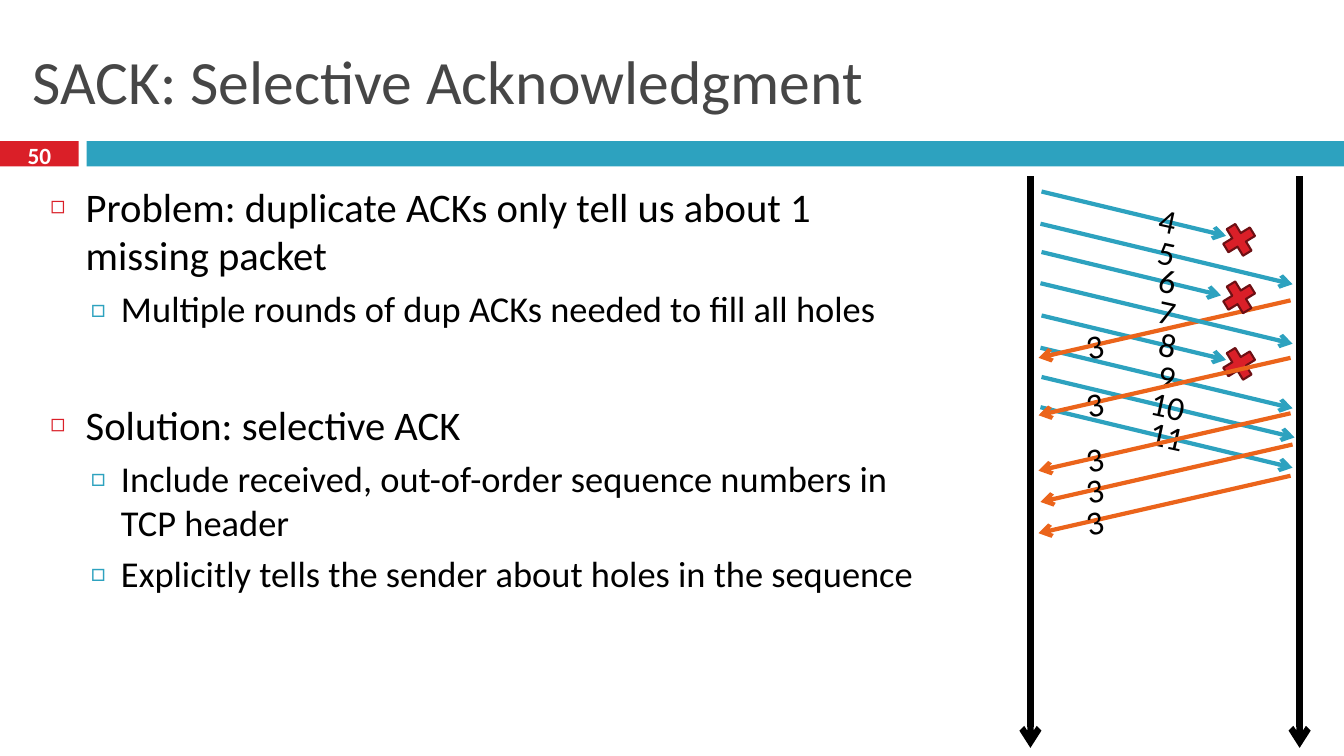
import lxml.etree
import pptx
import pptx.dml.color
import pptx.enum.shapes
import pptx.enum.text
import pptx.oxml.ns
import pptx.util

RGBColor = pptx.dml.color.RGBColor
ALIGN = pptx.enum.text.PP_ALIGN
ANCHOR = pptx.enum.text.MSO_ANCHOR
SHAPE = pptx.enum.shapes.MSO_SHAPE

BLACK = RGBColor(0x00, 0x00, 0x00)
WHITE = RGBColor(0xFF, 0xFF, 0xFF)
GRAY = RGBColor(0x46, 0x46, 0x46)
RED = RGBColor(0xDA, 0x1F, 0x28)
DARK_RED = RGBColor(0x6D, 0x10, 0x14)
TEAL = RGBColor(0x2D, 0xA2, 0xBF)
ORANGE = RGBColor(0xEB, 0x64, 0x1B)

FONT = "Calibri"
PX = 9144  # 100 px to the inch


def px(*lengths):
    return [pptx.util.Emu(length * PX) for length in lengths]


def add_xml(parent, tag, **attributes):
    return lxml.etree.SubElement(parent, pptx.oxml.ns.qn(tag), attributes)


class SlideBuilder:
    # Per list level: indent, hang, size, space before, bullet, its colour and size
    LEVELS = [
        (35, 35, 29, 7, "◻", RED, 60),
        (70, 30, 26, 5.5, "□", TEAL, 70),
    ]

    def __init__(self, presentation):
        self.slide = presentation.slides.add_slide(presentation.slide_layouts[1])
        self.shapes = self.slide.shapes

    def run(self, paragraph, text, size, color=BLACK, bold=False):
        run = paragraph.add_run()
        run.text = text
        run.font.name = FONT
        run.font.size = pptx.util.Pt(size)
        run.font.bold = bold
        run.font.color.rgb = color

    def place(self, shape, left, top, width, height):
        shape.left, shape.top, shape.width, shape.height = px(left, top, width, height)

    def title(self, text, *box):
        title = self.shapes.title
        self.place(title, *box)
        title.text_frame.auto_size = pptx.enum.text.MSO_AUTO_SIZE.NONE
        title.text_frame.vertical_anchor = ANCHOR.MIDDLE
        paragraph = title.text_frame.paragraphs[0]
        paragraph.alignment = ALIGN.LEFT
        self.run(paragraph, text, 44, GRAY)

    def bullets(self, items, *box):
        body = self.slide.placeholders[1]
        self.place(body, *box)
        frame = body.text_frame
        frame.auto_size = pptx.enum.text.MSO_AUTO_SIZE.NONE
        frame.vertical_anchor = ANCHOR.TOP
        for index, (level, text, extra_gap) in enumerate(items):
            indent, hang, size, gap, bullet, color, percent = self.LEVELS[level]
            paragraph = frame.add_paragraph() if index else frame.paragraphs[0]
            paragraph.level = level
            paragraph.space_before = pptx.util.Pt(gap + extra_gap if index else 0)
            properties = paragraph._p.get_or_add_pPr()
            properties.set("marL", str(indent * PX))
            properties.set("indent", str(-hang * PX))
            add_xml(add_xml(properties, "a:buClr"), "a:srgbClr", val=str(color))
            add_xml(properties, "a:buSzPct", val=str(percent * 1000))
            add_xml(properties, "a:buFont", typeface=FONT)
            add_xml(properties, "a:buChar", char=bullet)
            self.run(paragraph, text, size)

    def shape(self, kind, box, fill, outline=None, rotation=0):
        shape = self.shapes.add_shape(kind, *px(*box))
        shape.shadow.inherit = False
        shape.rotation = rotation
        shape.fill.solid()
        shape.fill.fore_color.rgb = fill
        if outline is None:
            shape.line.fill.background()
        else:
            shape.line.color.rgb = outline
            shape.line.width = pptx.util.Pt(1.5)

    def label(self, text, box, size=24, color=BLACK, bold=False, rotation=0):
        label = self.shapes.add_textbox(*px(*box))
        label.rotation = rotation
        frame = label.text_frame
        frame.word_wrap = True
        frame.vertical_anchor = ANCHOR.MIDDLE
        paragraph = frame.paragraphs[0]
        paragraph.alignment = ALIGN.CENTER
        self.run(paragraph, text, size, color, bold)

    def arrow(self, start, end, color, width=3):
        arrow = self.shapes.add_connector(
            pptx.enum.shapes.MSO_CONNECTOR.STRAIGHT, *px(*start, *end))
        arrow.line.color.rgb = color
        arrow.line.width = pptx.util.Pt(width)
        properties = arrow.element.spPr
        add_xml(properties.find(pptx.oxml.ns.qn("a:ln")), "a:tailEnd", type="arrow")
        add_xml(properties, "a:effectLst")

    def packet(self, number, left, top, right):
        drop = round((right - left) * 0.24)
        self.arrow((left, top), (right, top + drop), TEAL)
        self.label(number, (left + 70, top + 3, 111, 50), rotation=12.3)

    def loss(self, top):
        self.shape(SHAPE.MATH_MULTIPLY, (1208, top, 42, 42), RED, DARK_RED, 13.5)

    def acknowledgment(self, right, top):
        self.arrow((right, top), (right - 250, top + 57), ORANGE)
        self.label("3", (1030, top + 20, 111, 50), rotation=347.5)


def main():
    presentation = pptx.Presentation()
    presentation.slide_width, presentation.slide_height = px(1333, 750)
    builder = SlideBuilder(presentation)

    # Header band, title and page number
    builder.shape(SHAPE.RECTANGLE, (0, 140, 78, 25), RED)
    builder.shape(SHAPE.RECTANGLE, (86, 140, 1247, 25), TEAL)
    builder.title("SACK: Selective Acknowledgment", 22, 25, 1289, 108)
    builder.label("50", (0, 137, 78, 33), 16.6, WHITE, bold=True)

    # Problem and solution, the latter set apart by one line
    builder.bullets([
        (0, "Problem: duplicate ACKs only tell us about 1 missing packet", 0),
        (1, "Multiple rounds of dup ACKs needed to fill all holes", 0),
        (0, "Solution: selective ACK", 42.5),
        (1, "Include received, out-of-order sequence numbers in TCP header", 0),
        (1, "Explicitly tells the sender about holes in the sequence", 0),
    ], 40, 175, 879, 558)

    # Sender and receiver time lines
    for x in (1022, 1289):
        builder.arrow((x, 175), (x, 742), BLACK, 4.5)

    # Exchange, from back to front: packets, losses, acknowledgments
    exchange = [
        ([("8", 1033, 313, 1216), ("9", 1032, 345, 1282),
          ("10", 1033, 374, 1284), ("11", 1032, 404, 1282)],
         [340],
         [(1280, 298)]),
        ([("4", 1033, 190, 1216), ("5", 1032, 222, 1282),
          ("6", 1033, 250, 1211), ("7", 1032, 281, 1282)],
         [217, 274],
         [(1280, 355), (1280, 410), (1282, 441), (1280, 472)]),
    ]
    for packets, losses, acknowledgments in exchange:
        for packet in packets:
            builder.packet(*packet)
        for top in losses:
            builder.loss(top)
        for acknowledgment in acknowledgments:
            builder.acknowledgment(*acknowledgment)

    presentation.save("out.pptx")


if __name__ == "__main__":
    main()
